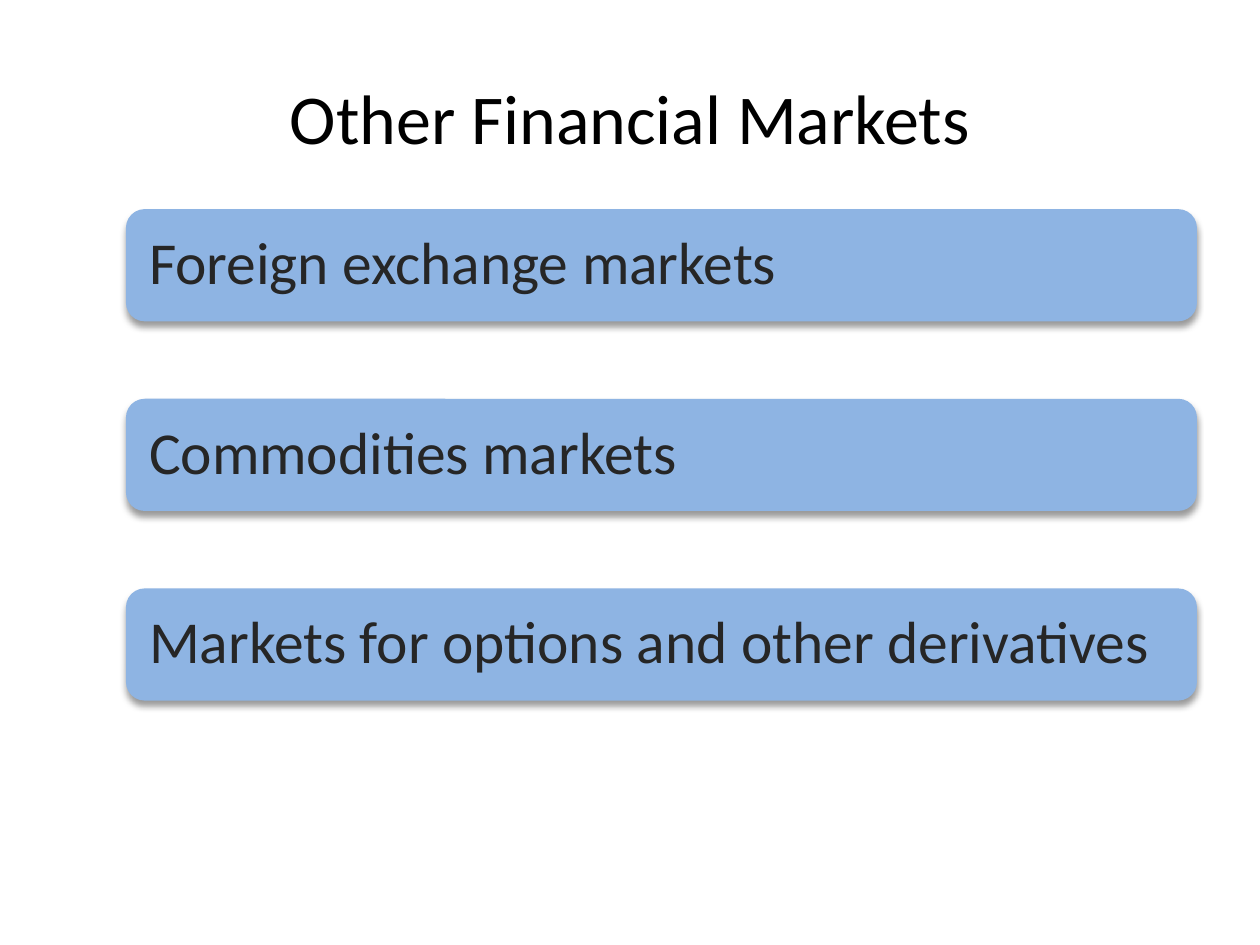
from lxml import etree
from pptx import Presentation, util as u
from pptx.dml.color import RGBColor
from pptx.enum import shapes, text
from pptx.oxml.ns import qn

# Content
TITLE = "Other Financial Markets"
MARKETS = [
    "Foreign exchange markets",
    "Commodities markets",
    "Markets for options and other derivatives",
]

# Layout in inches
LEFT, TOP, WIDTH, HEIGHT, STEP = 1, 1.66, 8.5, 0.89, 1.505


def rgb(value):
    return RGBColor.from_string(value)


def style_text(tf, size, color, align):
    tf.word_wrap = True
    tf.vertical_anchor = text.MSO_ANCHOR.MIDDLE
    p = tf.paragraphs[0]
    p.alignment = align
    font = p.runs[0].font
    font.name, font.size = "Calibri", u.Pt(size)
    font.color.rgb = rgb(color)


def add_shadow(shape):
    shape.shadow.inherit = False
    effects = shape._element.spPr.find(qn("a:effectLst"))
    shadow = etree.SubElement(
        effects, qn("a:outerShdw"), blurRad=str(u.Pt(4)), dist=str(u.Pt(3)),
        dir=str(90 * 60000), rotWithShape="0")
    color = etree.SubElement(shadow, qn("a:srgbClr"), val="000000")
    etree.SubElement(color, qn("a:alpha"), val="40000")


def add_bar(s, label, top):
    bar = s.shapes.add_shape(
        shapes.MSO_SHAPE.ROUNDED_RECTANGLE,
        u.Inches(LEFT), u.Inches(top), u.Inches(WIDTH), u.Inches(HEIGHT))
    bar.fill.solid()
    bar.fill.fore_color.rgb = rgb("8EB4E3")
    bar.line.fill.background()
    add_shadow(bar)
    tf = bar.text_frame
    tf.text = label
    tf.margin_left = tf.margin_right = u.Inches(0.14)
    tf.margin_top = tf.margin_bottom = u.Inches(0.14)
    tf.paragraphs[0].line_spacing = 0.9
    style_text(tf, 34, "262626", text.PP_ALIGN.LEFT)


def main():
    prs = Presentation()
    prs.slide_width, prs.slide_height = u.Inches(10), u.Inches(7.5)
    s = prs.slides.add_slide(prs.slide_layouts[5])

    # Title
    title = s.shapes.title
    title.left, title.top = u.Inches(0.5), u.Inches(0.3)
    title.width, title.height = u.Inches(9), u.Inches(1.25)
    title.text_frame.text = TITLE
    style_text(title.text_frame, 40, "000000", text.PP_ALIGN.CENTER)

    # Market bars
    for i, label in enumerate(MARKETS):
        add_bar(s, label, TOP + i * STEP)

    prs.save("out.pptx")


if __name__ == "__main__":
    main()
